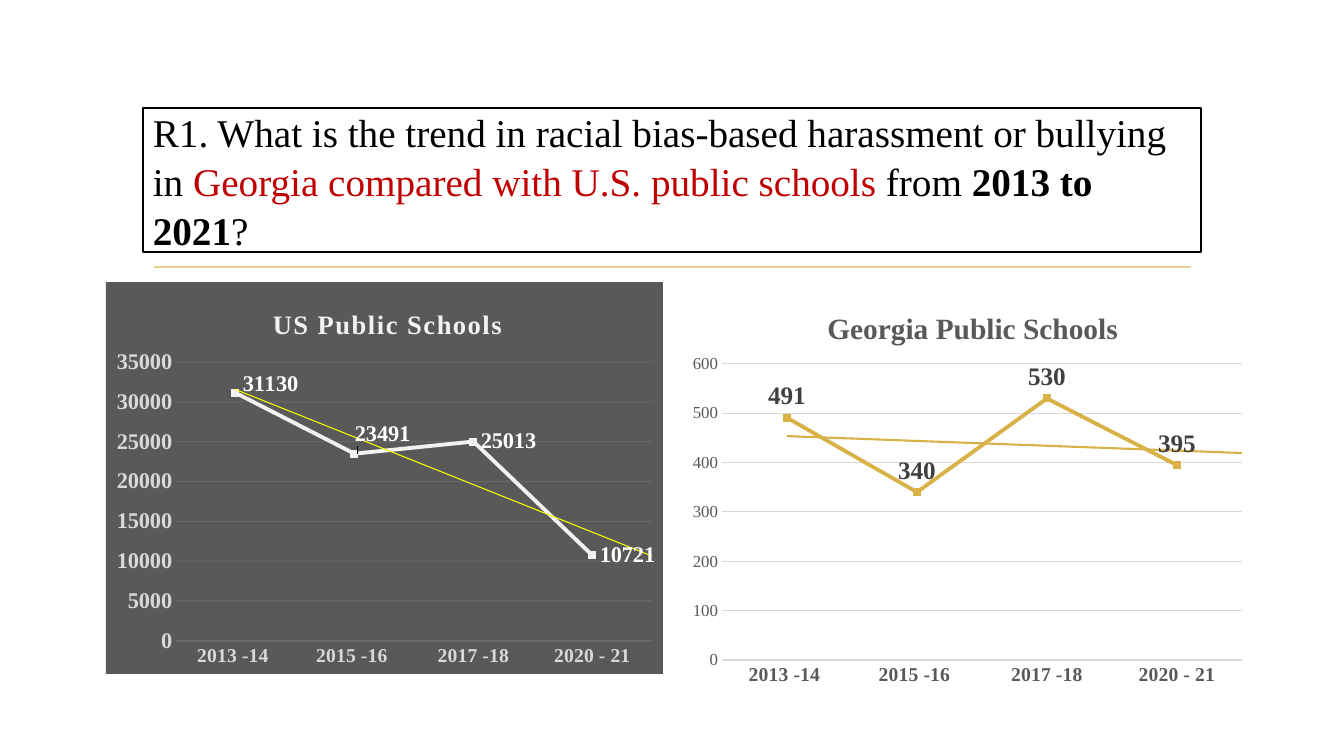
from lxml.etree import SubElement
from pptx import Presentation
from pptx.chart.data import CategoryChartData
from pptx.dml.color import RGBColor
from pptx.enum.chart import XL_CHART_TYPE, XL_LABEL_POSITION, XL_TICK_MARK
from pptx.enum.shapes import MSO_CONNECTOR, MSO_SHAPE
from pptx.enum.text import MSO_ANCHOR, PP_ALIGN
from pptx.oxml import parse_xml
from pptx.oxml.ns import nsdecls, qn
from pptx.util import Pt

PX = 914400 / 100.8
YEARS = ["2013 -14 ", "2015 -16 ", "2017 -18", "2020 - 21"]


def px(n):
    return round(n * PX)


def rgb(color):
    return RGBColor.from_string(color)


def set_font(font, size, color, bold=False):
    font.name, font.size, font.bold = SlideBuilder.FONT, Pt(size), bold
    font.color.rgb = rgb(color)


def set_line(line, color, width, alpha=None):
    """Style a line; alpha is its opacity in percent."""
    line.color.rgb = rgb(color)
    line.width = Pt(width)
    if alpha:
        clr = line.fill._xPr.find(".//" + qn("a:srgbClr"))
        SubElement(clr, qn("a:alpha")).set("val", str(alpha * 1000))


def set_layout(parent, index, frame, edge=True, **fractions):
    """Place a chart part by px offsets, as fractions of the chart frame."""
    for old in parent.findall(qn("c:layout")):
        parent.remove(old)
    layout = parse_xml(f"<c:layout {nsdecls('c')}><c:manualLayout/></c:layout>")
    manual = layout[0]
    if "w" in fractions:
        SubElement(manual, qn("c:layoutTarget")).set("val", "inner")
    if edge:
        for mode in ("xMode", "yMode"):
            SubElement(manual, qn("c:" + mode)).set("val", "edge")
    for key, n in fractions.items():
        total = frame[2] if key in "xw" else frame[3]
        SubElement(manual, qn("c:" + key)).set("val", str(round(n / total, 4)))
    parent.insert(index, layout)


class SlideBuilder:
    FONT = "Times New Roman"

    def __init__(self, prs):
        self.slide = prs.slides.add_slide(prs.slide_layouts[6])

    def rule(self, x1, y1, x2, y2, color, width):
        ln = self.slide.shapes.add_connector(
            MSO_CONNECTOR.STRAIGHT, px(x1), px(y1), px(x2), px(y2))
        set_line(ln.line, color, width)
        SubElement(ln._element.spPr, qn("a:effectLst"))

    def question(self, frame, runs):
        """Add the outlined box; runs are (text, color, bold)."""
        sp = self.slide.shapes.add_shape(MSO_SHAPE.RECTANGLE, *map(px, frame))
        sp.shadow.inherit = False
        sp.fill.solid()
        sp.fill.fore_color.rgb = rgb("FFFFFF")
        set_line(sp.line, "000000", 1.25)
        tf = sp.text_frame
        tf.word_wrap = True
        tf.vertical_anchor = MSO_ANCHOR.MIDDLE
        p = tf.paragraphs[0]
        p.alignment = PP_ALIGN.LEFT
        p.line_spacing = 1.04
        for text, color, bold in runs:
            r = p.add_run()
            r.text = text
            set_font(r.font, 28, color, bold)

    def line_chart(self, frame, values, plot, fill):
        data = CategoryChartData()
        data.categories = YEARS
        data.add_series("Series 1", values)
        chart = self.slide.shapes.add_chart(
            XL_CHART_TYPE.LINE, *map(px, frame), data).chart
        chart.has_legend = False
        set_font(chart.font, 10, "000000")
        root = chart.element
        root.find(qn("c:chart")).addnext(parse_xml(
            f"<c:spPr {nsdecls('c', 'a')}><a:solidFill><a:srgbClr val='{fill}'/>"
            "</a:solidFill><a:ln><a:noFill/></a:ln></c:spPr>"))
        set_layout(root.find(".//" + qn("c:plotArea")), 0, frame, **plot)
        return chart

    def chart_title(self, chart, frame, text, x, y, size, color, spacing=0):
        chart.has_title = True
        r = chart.chart_title.text_frame.paragraphs[0].add_run()
        r.text = text
        set_font(r.font, size, color, True)
        title = chart.element.find(".//" + qn("c:title"))
        title.find(".//" + qn("a:rPr")).set("spc", str(spacing))
        set_layout(title, 1, frame, x=x, y=y)

    def axes(self, chart, color, size, bold, top, step, line, grid):
        """Style both axes; line and grid are (color, width, alpha)."""
        cat, val = chart.category_axis, chart.value_axis
        for axis in (cat, val):
            axis.major_tick_mark = axis.minor_tick_mark = XL_TICK_MARK.NONE
        set_font(cat.tick_labels.font, 14, color, True)
        set_font(val.tick_labels.font, size, color, bold)
        set_line(cat.format.line, *line)
        val.format.line.fill.background()
        val.has_major_gridlines = True
        set_line(val.major_gridlines.format.line, *grid)
        val.minimum_scale, val.maximum_scale, val.major_unit = 0, top, step

    def series(self, chart, color, label, position, trend):
        """Style the line, its labels (size, color) and trend (color, width)."""
        chart.plots[0].vary_by_categories = False
        ser = chart.plots[0].series[0]
        ser.smooth = False
        set_line(ser.format.line, color, 2.75)
        ser.marker.style = None
        labels = ser.data_labels
        labels.show_value = True
        labels.position = position
        set_font(labels.font, *label, True)
        trend_color, width = trend
        ser._element.find(qn("c:cat")).addprevious(parse_xml(
            f"<c:trendline {nsdecls('c', 'a')}><c:spPr><a:ln w='{Pt(width)}'>"
            f"<a:solidFill><a:srgbClr val='{trend_color}'/></a:solidFill></a:ln></c:spPr>"
            "<c:trendlineType val='linear'/><c:forward val='0.5'/>"
            "<c:dispRSqr val='0'/><c:dispEq val='0'/></c:trendline>"))
        return ser

    def shift_label(self, ser, index, frame, label, dx, dy):
        dl = ser.points[index].data_label
        set_font(dl.font, *label, True)
        dl.position = XL_LABEL_POSITION.RIGHT
        dlbl = ser._element.findall(".//" + qn("c:dLbl"))[index]
        set_layout(dlbl, 1, frame, edge=False, x=dx, y=dy)


def main():
    prs = Presentation()
    prs.slide_width, prs.slide_height = px(1344), px(756)
    s = SlideBuilder(prs)
    s.rule(154, 267, 1191, 267, "E8D191", 1.25)
    s.question((143, 108, 1058, 144), [
        ("R1. What is the trend in racial bias-based harassment or bullying in ",
         "000000", False),
        ("Georgia compared with U.S. public schools ", "C00000", False),
        ("from ", "000000", False),
        ("2013 to 2021", "000000", True),
        ("?", "000000", False)])

    us = (106, 282, 557, 392)
    chart = s.line_chart(us, (31130, 23491, 25013, 10721),
                         dict(x=70, y=80, w=476, h=279), "595959")
    s.chart_title(chart, us, "US Public Schools", 162, 21, 19, "F2F2F2", 120)
    faint = ("F2F2F2", 0.75, 10)
    s.axes(chart, "D9D9D9", 16, True, 35000, 5000, faint, faint)
    label = (16, "FFFFFF")
    ser = s.series(chart, "F2F2F2", label, XL_LABEL_POSITION.RIGHT, ("FFFF00", 0.75))
    for index, (dx, dy) in enumerate([(0, -9), (-7, -20)]):
        s.shift_label(ser, index, us, label, dx, dy)

    georgia = (681, 282, 573, 412)
    chart = s.line_chart(georgia, (491, 340, 530, 395),
                         dict(x=41, y=82, w=520, h=296), "FFFFFF")
    s.chart_title(chart, georgia, "Georgia Public Schools", 141, 22, 21, "595959")
    s.axes(chart, "595959", 12, False, 600, 100,
           ("D9D9D9", 1), ("D9D9D9", 0.75))
    s.series(chart, "D9B247", (18, "404040"), XL_LABEL_POSITION.ABOVE, ("D9B247", 1.5))
    prs.save("out.pptx")


if __name__ == "__main__":
    main()
